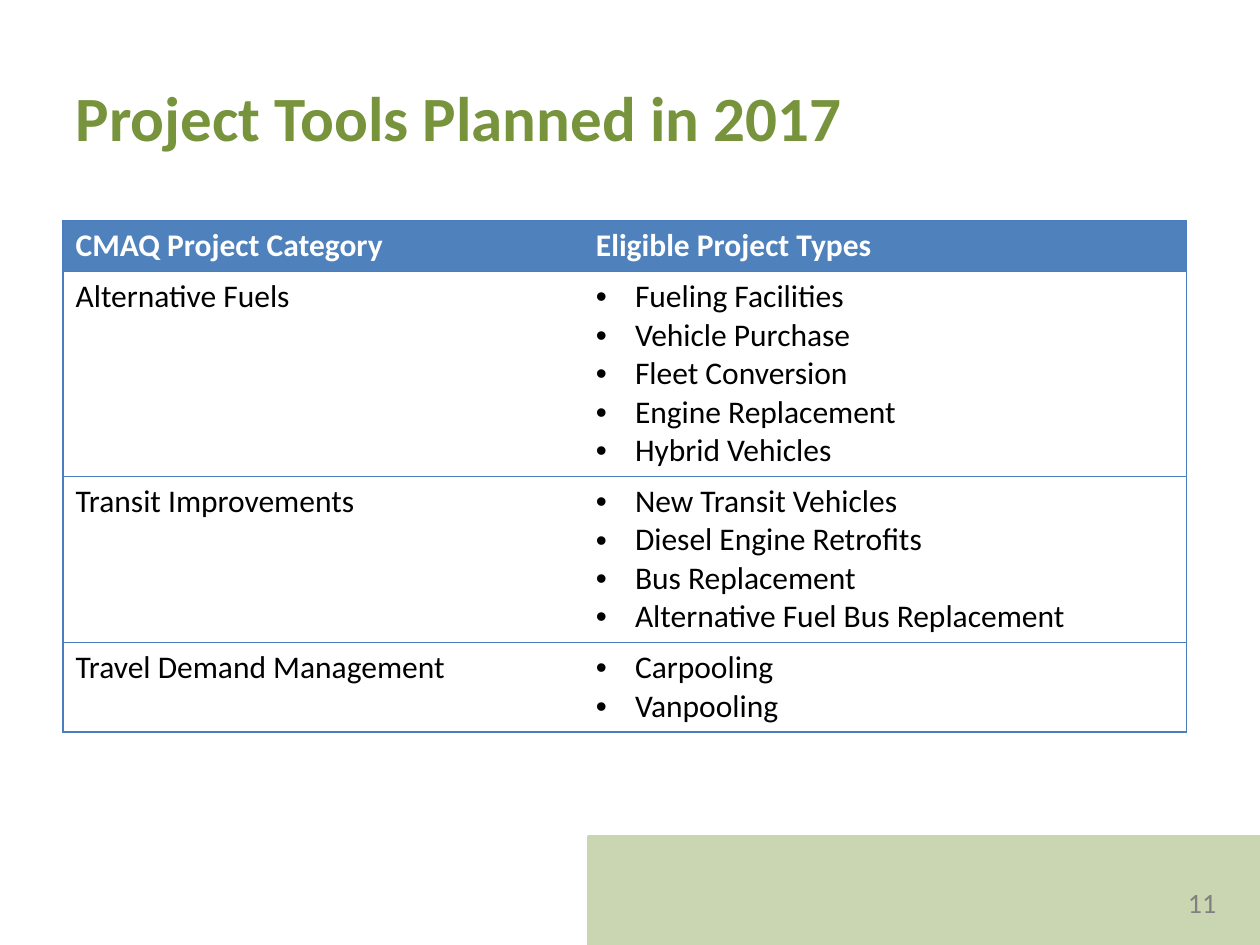
from dataclasses import dataclass
from lxml import etree
from pptx import Presentation
from pptx import util as u
from pptx.dml.color import RGBColor
from pptx.enum import shapes, text
from pptx.oxml import ns


@dataclass(frozen=True)
class Theme:
    font: str = "Calibri"
    title: str = "77933C"
    band: str = "CAD5B2"
    number: str = "808080"
    head: str = "4F81BD"
    rule: str = "4B7EBC"
    white: str = "FFFFFF"
    black: str = "000000"
    big: int = 36
    body: int = 18
    small: int = 16


THEME = Theme()
HEADS = ("CMAQ Project Category", "Eligible Project Types")
GROUPS = (
    ("Alternative Fuels", ("Fueling Facilities", "Vehicle Purchase", "Fleet Conversion",
                           "Engine Replacement", "Hybrid Vehicles")),
    ("Transit Improvements", ("New Transit Vehicles", "Diesel Engine Retrofits",
                              "Bus Replacement", "Alternative Fuel Bus Replacement")),
    ("Travel Demand Management", ("Carpooling", "Vanpooling")),
)


def place(shape, left, top, width, height):
    shape.left, shape.top = u.Inches(left), u.Inches(top)
    shape.width, shape.height = u.Inches(width), u.Inches(height)


def style(para, size, color, bold=False):
    font = para.font
    font.name, font.size, font.bold = THEME.font, u.Pt(size), bold
    font.color.rgb = RGBColor.from_string(color)


def add_title(slide, words):
    title = slide.shapes.title
    place(title, 0.5, 0.3, 9, 1.25)
    frame = title.text_frame
    frame.text = words
    frame.vertical_anchor = text.MSO_ANCHOR.MIDDLE
    para = frame.paragraphs[0]
    para.alignment = text.PP_ALIGN.LEFT
    style(para, THEME.big, THEME.title, True)


def add_band(slide):
    band = slide.shapes.add_shape(
        shapes.MSO_SHAPE.RECTANGLE,
        u.Inches(4.67), u.Inches(6.64), u.Inches(5.33), u.Inches(0.86))
    band.shadow.inherit = False
    color = RGBColor.from_string(THEME.band)
    band.fill.solid()
    band.fill.fore_color.rgb = color
    band.line.color.rgb = color
    band.line.width = u.Pt(2)


def add_number(slide, words):
    box = slide.shapes.add_textbox(
        u.Inches(9.33), u.Inches(6.98), u.Inches(0.5), u.Inches(0.37))
    frame = box.text_frame
    frame.word_wrap = True
    frame.text = words
    style(frame.paragraphs[0], THEME.small, THEME.number)


def add_bullet(para):
    props = para._p.get_or_add_pPr()
    indent = u.Inches(0.31)
    props.set("marL", str(indent))
    props.set("indent", str(-indent))
    etree.SubElement(props, ns.qn("a:buFont")).set("typeface", "Arial")
    etree.SubElement(props, ns.qn("a:buChar")).set("char", "•")


def set_rules(cell, sides):
    props = cell._tc.get_or_add_tcPr()
    for side in "LRTB":
        line = etree.SubElement(props, ns.qn("a:ln" + side))
        line.set("w", str(u.Pt(0.75)))
        if side in sides:
            fill = etree.SubElement(line, ns.qn("a:solidFill"))
            etree.SubElement(fill, ns.qn("a:srgbClr")).set("val", THEME.rule)
        else:
            etree.SubElement(line, ns.qn("a:noFill"))


def fill_cell(cell, lines, sides, head=False, bullets=False):
    set_rules(cell, sides)
    if head:
        cell.fill.solid()
        cell.fill.fore_color.rgb = RGBColor.from_string(THEME.head)
    else:
        cell.fill.background()
    frame = cell.text_frame
    frame.text = "\n".join(lines)
    for para in frame.paragraphs:
        if bullets:
            add_bullet(para)
        style(para, THEME.body, THEME.white if head else THEME.black, head)


def add_grid(slide):
    rows = [((HEADS[0],), (HEADS[1],))] + [((name,), kinds) for name, kinds in GROUPS]
    heights = [0.1 + 0.305 * len(kinds) for _, kinds in rows]
    table = slide.shapes.add_table(
        len(rows), 2, u.Inches(0.5), u.Inches(1.75),
        u.Inches(8.92), u.Inches(sum(heights))).table
    table.first_row = table.horz_banding = False
    for col, width in zip(table.columns, (4.13, 4.79)):
        col.width = u.Inches(width)
    for i, (name, kinds) in enumerate(rows):
        head = i == 0
        table.rows[i].height = u.Inches(heights[i])
        fill_cell(table.cell(i, 0), name, "LTB", head)
        fill_cell(table.cell(i, 1), kinds, "RTB", head, not head)


def main():
    deck = Presentation()
    deck.slide_width, deck.slide_height = u.Inches(10), u.Inches(7.5)
    slide = deck.slides.add_slide(deck.slide_layouts[5])
    add_band(slide)
    add_number(slide, "11")
    add_title(slide, "Project Tools Planned in 2017")
    add_grid(slide)
    deck.save("out.pptx")


if __name__ == "__main__":
    main()
